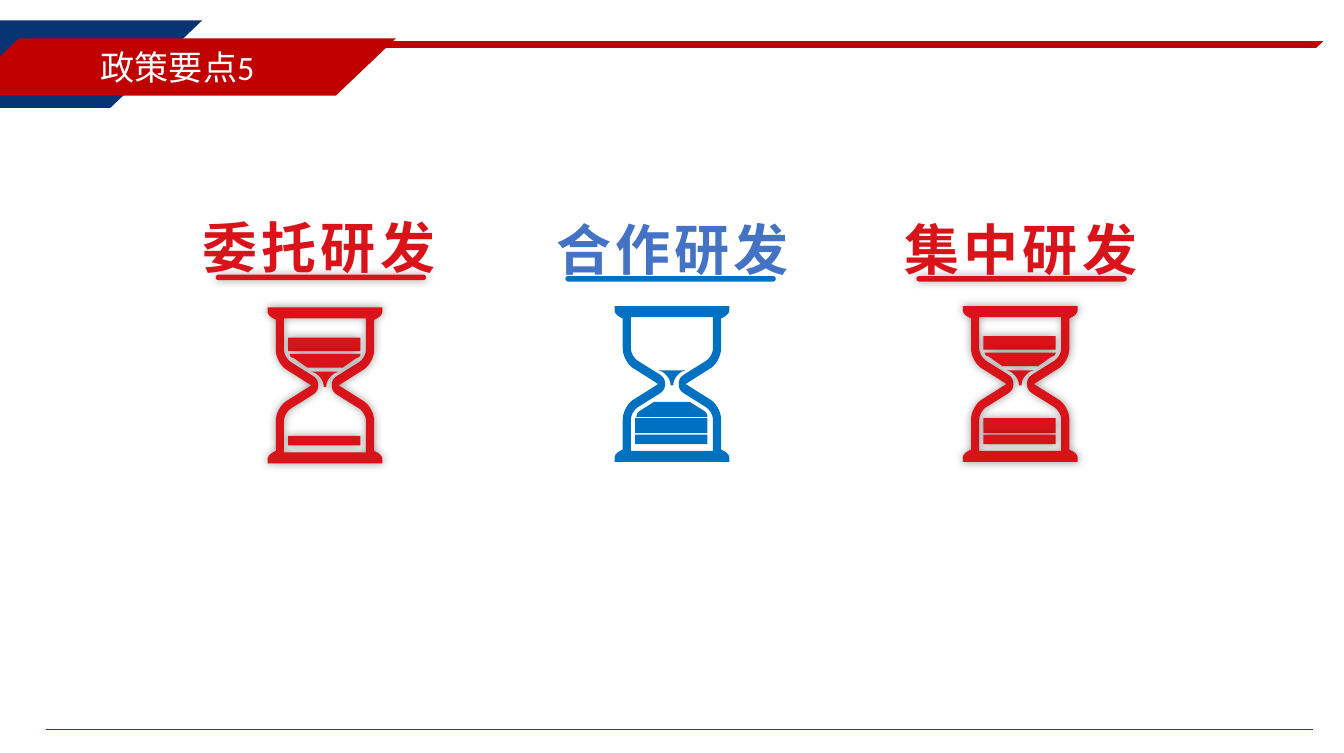
from lxml import etree
from pptx import Presentation, util as u
from pptx.dml.color import RGBColor
from pptx.enum import shapes, text
from pptx.oxml.ns import qn

WIDE, HIGH = 9.84, 5.51
RED, BLUE, DEEP, NAVY, INK = "D8141A", "0070C0", "C00000", "083473", "4472C4"
CJK = "Noto Sans CJK JP"
TITLE = "政策要点5"
ITEMS = [
    {"name": "委托研发", "ink": RED, "fill": RED, "glow": True,
     "mid": (2.34, 2.35, 2.38), "top": (1.51, 2.01, 2.82),
     "sand": ("band", "bowl", "drip", "base")},
    {"name": "合作研发", "ink": INK, "fill": BLUE, "glow": False,
     "mid": (4.93, 4.91, 4.92), "top": (1.53, 2.02, 2.81),
     "sand": ("drip", "heap", "base", "mound")},
    {"name": "集中研发", "ink": RED, "fill": RED, "glow": True,
     "mid": (7.48, 7.48, 7.47), "top": (1.53, 2.02, 2.81),
     "sand": ("band", "bowl", "drip", "heap", "base")},
]
BARS = {"band": (-0.35, 0.1), "heap": (0.25, 0.11), "base": (0.37, 0.07)}
HALVES = {
    "bowl": [(0.26, -0.23), (0.26, -0.22, 0.25, -0.2, 0.23, -0.2), (0.13, -0.13)],
    "drip": [(0.1, -0.1), (0.07, -0.09), (0.03, -0.06, 0.01, -0.03, 0.01, 0.01)],
    "mound": [(0.13, 0.13), (0.24, 0.2), (0.25, 0.21, 0.26, 0.22, 0.26, 0.24)],
}
OUTER = [(0.42, -0.57), (0.42, -0.54), (0.42, -0.52, 0.4, -0.5, 0.38, -0.49),
         (0.36, -0.48), (0.36, -0.26), (0.36, -0.21, 0.33, -0.15, 0.29, -0.12),
         (0.1, 0)]
INNER = [(0.3, -0.49), (0.3, -0.26), (0.3, -0.23, 0.28, -0.19, 0.25, -0.17),
         (0.09, -0.07), (0.06, -0.05, 0.05, -0.03, 0.05, 0)]
SLABS = [((-0.67, 0.15, 2.15, 0.64), NAVY), ((2.49, 0.3, 7.2, 0.05), DEEP),
         ((-0.3, 0.28, 3.2, 0.42), DEEP)]


def rgb(code):
    return RGBColor.from_string(code)


def box(*nums):
    return [u.Inches(n) for n in nums]


def curve(steps, parts=8):
    dots = []
    for step in steps:
        if len(step) == 2:
            dots.append(step)
            continue
        ends = [dots[-1], step[:2], step[2:4], step[4:]]
        for i in range(1, parts + 1):
            t = i / parts
            s = 1 - t
            mix = (s ** 3, 3 * s * s * t, 3 * s * t * t, t ** 3)
            dots.append(tuple(sum(m * e[k] for m, e in zip(mix, ends)) for k in (0, 1)))
    return dots


def flip(dots, x, y):
    return dots + [(x * a, y * b) for a, b in reversed(dots)]


def paint(shape, code, glow=False):
    shape.shadow.inherit = False
    shape.fill.solid()
    shape.fill.fore_color.rgb = rgb(code)
    shape.line.fill.background()
    if glow:
        list_ = shape._element.spPr.find(qn("a:effectLst"))
        cast = etree.SubElement(list_, qn("a:outerShdw"), blurRad=str(u.Pt(5)),
                                dist="0", dir="0", algn="ctr", rotWithShape="0")
        tint = etree.SubElement(cast, qn("a:srgbClr"), val="000000")
        etree.SubElement(tint, qn("a:alpha"), val="40000")


def write(shape, words, size, font, code, bold=False, gap=0):
    frame = shape.text_frame
    frame.text = words
    frame.word_wrap = True
    para = frame.paragraphs[0]
    para.alignment = text.PP_ALIGN.CENTER
    face = para.runs[0].font
    face.size, face.bold, face.name = u.Pt(size), bold, font
    face.color.rgb = rgb(code)
    props = para.runs[0]._r.get_or_add_rPr()
    etree.SubElement(props, qn("a:ea"), typeface=CJK)
    if gap:
        props.set("spc", str(gap))


def trace(group, rings, x, y):
    rings = [[(u.Inches(x + a), u.Inches(y + b)) for a, b in ring] for ring in rings]
    pen = group.shapes.build_freeform(*rings[0][0], scale=1.0)
    pen.add_line_segments(rings[0][1:], close=True)
    for ring in rings[1:]:
        pen.move_to(*ring[0])
        pen.add_line_segments(ring[1:], close=True)
    return pen.convert_to_shape()


def glass(slide, item):
    group = slide.shapes.add_group_shape()
    word_x, rule_x, x = item["mid"]
    word_y, rule_y, y = item["top"]
    kind = shapes.MSO_SHAPE
    rule = group.shapes.add_shape(kind.ROUNDED_RECTANGLE,
                                  *box(rule_x - 0.77, rule_y, 1.54, 0.04))
    rule.adjustments[0] = 0.5
    rings = [flip(flip(curve(q), 1, -1), -1, 1) for q in (OUTER, INNER)]
    parts = [rule, trace(group, rings, x, y)]
    for name in item["sand"]:
        if name in BARS:
            top, tall = BARS[name]
            part = group.shapes.add_shape(kind.RECTANGLE,
                                          *box(x - 0.27, y + top, 0.53, tall))
        else:
            part = trace(group, [flip(curve(HALVES[name]), -1, 1)], x, y)
        parts.append(part)
    for part in parts:
        paint(part, item["fill"], item["glow"])
    label = group.shapes.add_textbox(*box(word_x - 1.11, word_y, 2.21, 0.59))
    write(label, item["name"], 29, CJK, item["ink"], True, 220)


def header(slide):
    for place, code in SLABS:
        slab = slide.shapes.add_shape(shapes.MSO_SHAPE.PARALLELOGRAM, *box(*place))
        slab.adjustments[0] = 1.05
        paint(slab, code)
    title = slide.shapes.title
    title.left, title.top, title.width, title.height = box(0.3, 0.28, 2, 0.42)
    write(title, TITLE, 18, "Calibri", "FFFFFF")
    frame = title.text_frame
    frame.auto_size = text.MSO_AUTO_SIZE.NONE
    frame.vertical_anchor = text.MSO_ANCHOR.MIDDLE
    frame.margin_top = frame.margin_bottom = 0
    title._element.getparent().append(title._element)


def footer(slide):
    line = slide.shapes.add_connector(shapes.MSO_CONNECTOR.STRAIGHT,
                                      *box(0.34, 5.34, 9.61, 5.34))
    line.line.color.rgb = rgb(DEEP)
    line.line.width = u.Pt(0.5)
    etree.SubElement(line._element.spPr, qn("a:effectLst"))


def main():
    deck = Presentation()
    deck.slide_width, deck.slide_height = box(WIDE, HIGH)
    slide = deck.slides.add_slide(deck.slide_layouts[5])
    for item in ITEMS:
        glass(slide, item)
    header(slide)
    footer(slide)
    deck.save("out.pptx")


if __name__ == "__main__":
    main()
